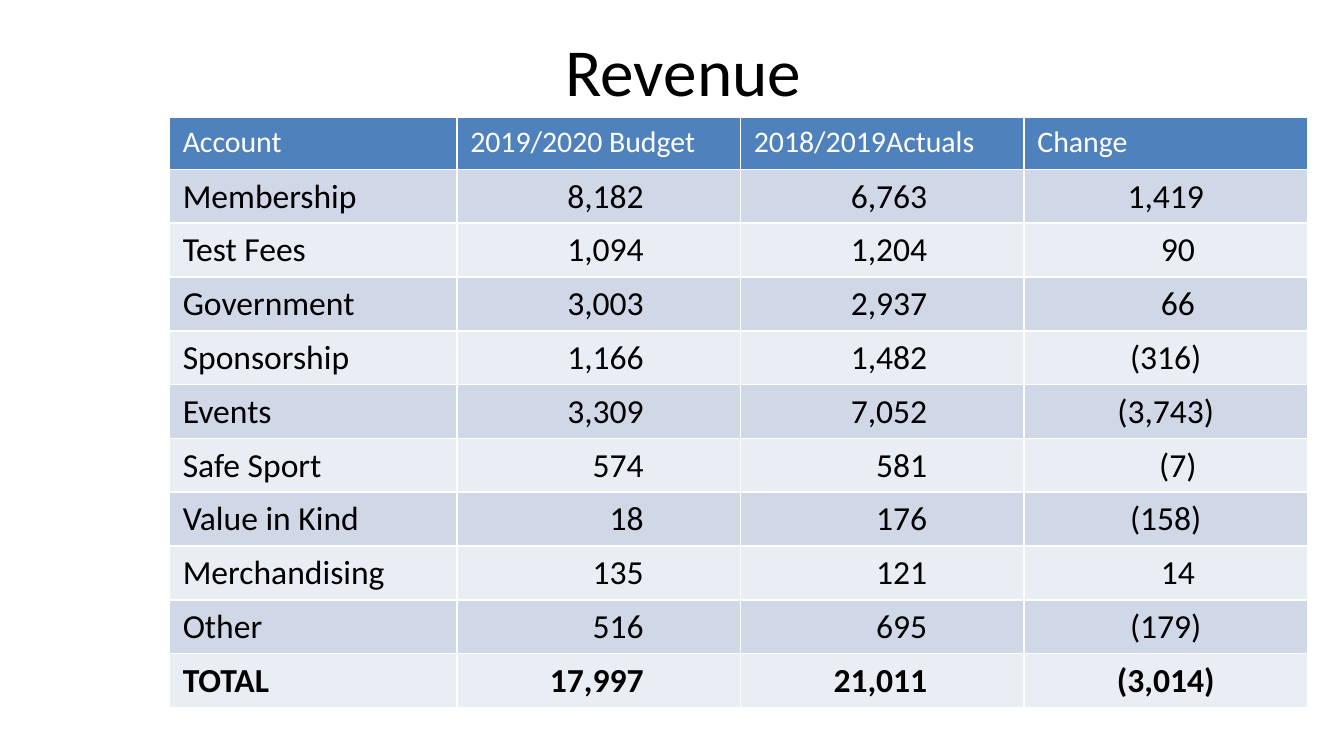
from lxml import etree
from pptx import Presentation
from pptx.dml.color import RGBColor
from pptx.enum.text import PP_ALIGN
from pptx.oxml.ns import qn
from pptx.util import Inches, Pt

LEFT, MID, RIGHT = PP_ALIGN.LEFT, PP_ALIGN.CENTER, PP_ALIGN.RIGHT
FONT = "Calibri"
WHITE, BLACK, BLUE = "FFFFFF", "000000", "4F81BD"
BANDS = ("E9EDF4", "D0D8E8")
WIDE = Inches(10)
HIGH = WIDE * 9 // 16
WIDTHS = (2.14, 2.11, 2.11, 2.11)
HEAD, STEP = 0.39, 0.4  # row heights
PAD, INSET, SHIFT = 0.1, 0.72, 0.28  # cell margins

ROWS = (
    ("Account", "2019/2020 Budget", "2018/2019Actuals", "Change"),
    ("Membership", "8,182", "6,763", "1,419"),
    ("Test Fees", "1,094", "1,204", "90"),
    ("Government", "3,003", "2,937", "66"),
    ("Sponsorship", "1,166", "1,482", "(316)"),
    ("Events", "3,309", "7,052", "(3,743)"),
    ("Safe Sport", "574", "581", "(7)"),
    ("Value in Kind", "18", "176", "(158)"),
    ("Merchandising", "135", "121", "14"),
    ("Other", "516", "695", "(179)"),
    ("TOTAL", "17,997", "21,011", "(3,014)"),
)


def color(code):
    return RGBColor.from_string(code)


def write(frame, text, size, ink, align=LEFT, bold=False):
    para = frame.paragraphs[0]
    para.text = text
    para.alignment = align
    font = para.font
    font.name, font.size, font.bold = FONT, Pt(size), bold
    font.color.rgb = color(ink)


def add_title(slide, text):
    box = slide.shapes.add_textbox(
        Inches(2.42), Inches(0.17), Inches(5.33), Inches(0.71))
    box.text_frame.word_wrap = True
    write(box.text_frame, text, 36, BLACK, MID)


def edge(cell):
    """Draw a thin white line on all four sides."""
    props = cell._tc.get_or_add_tcPr()
    for side in "LRTB":
        line = etree.SubElement(props, qn(f"a:ln{side}"), w=str(Pt(1)))
        fill = etree.SubElement(line, qn("a:solidFill"))
        etree.SubElement(fill, qn("a:srgbClr"), val=WHITE)


def paint(cell, code):
    cell.fill.solid()
    cell.fill.fore_color.rgb = color(code)


def fill_cell(cell, row, col, text):
    edge(cell)
    if row == 0:
        paint(cell, BLUE)
        write(cell.text_frame, text, 16, WHITE)
        return
    paint(cell, BANDS[row % 2])
    align = (LEFT, RIGHT, RIGHT, MID)[col]
    if align == RIGHT:
        cell.margin_right = Inches(INSET)
    elif align == MID:
        # Short values sit a little to the right
        cell.margin_left = Inches(SHIFT if len(text) < 4 else PAD)
    write(cell.text_frame, text, 18, BLACK, align, row == len(ROWS) - 1)


def add_grid(slide):
    high = HEAD + STEP * (len(ROWS) - 1)
    table = slide.shapes.add_table(
        len(ROWS), len(WIDTHS), Inches(1.26), Inches(0.87),
        Inches(sum(WIDTHS)), Inches(high)).table
    for col, width in zip(table.columns, WIDTHS):
        col.width = Inches(width)
    for r, texts in enumerate(ROWS):
        table.rows[r].height = Inches(STEP if r else HEAD)
        for c, text in enumerate(texts):
            fill_cell(table.cell(r, c), r, c, text)


def main():
    deck = Presentation()
    deck.slide_width, deck.slide_height = WIDE, HIGH
    slide = deck.slides.add_slide(deck.slide_layouts[6])
    # Heading
    add_title(slide, "Revenue")
    # Budget table
    add_grid(slide)
    deck.save("out.pptx")


if __name__ == "__main__":
    main()
